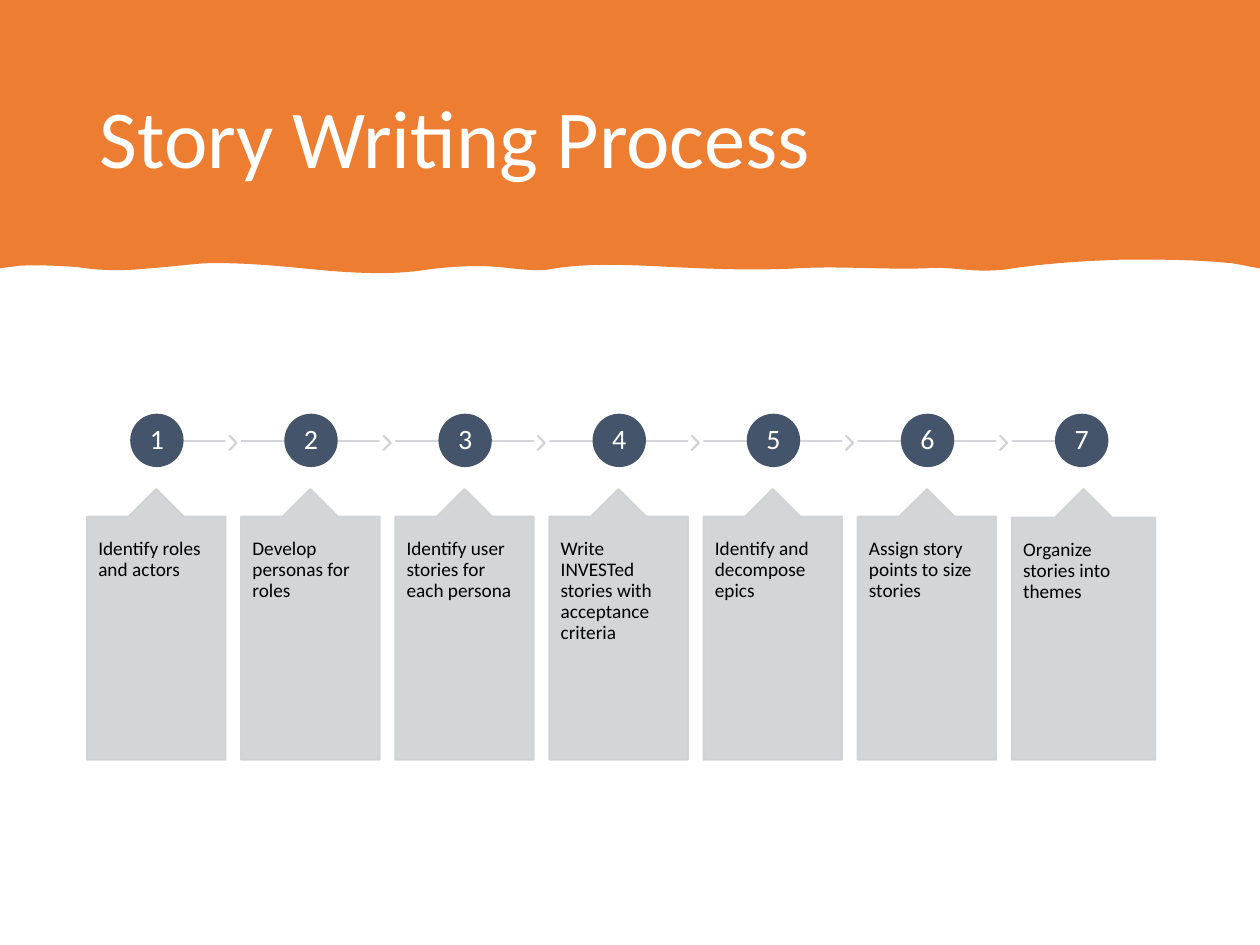
from dataclasses import dataclass

from lxml import etree
from pptx import Presentation
from pptx.dml.color import RGBColor
from pptx.enum.shapes import MSO_CONNECTOR, MSO_SHAPE
from pptx.enum.text import MSO_ANCHOR, PP_ALIGN
from pptx.oxml.ns import qn
from pptx.util import Inches, Pt

STRAIGHT = MSO_CONNECTOR.STRAIGHT
OVAL, CHEVRON, CALLOUT = MSO_SHAPE.OVAL, MSO_SHAPE.CHEVRON, MSO_SHAPE.UP_ARROW_CALLOUT
TOP, MIDDLE = MSO_ANCHOR.TOP, MSO_ANCHOR.MIDDLE
LEFT, CENTER = PP_ALIGN.LEFT, PP_ALIGN.CENTER


@dataclass(frozen=True)
class Theme:
    font: str = "Calibri"
    banner: RGBColor = RGBColor(0xED, 0x7D, 0x31)
    badge: RGBColor = RGBColor(0x44, 0x54, 0x6A)
    panel: RGBColor = RGBColor(0xCF, 0xD1, 0xD4)
    light: RGBColor = RGBColor(0xFF, 0xFF, 0xFF)
    dark: RGBColor = RGBColor(0, 0, 0)
    title_size: float = 47
    number_size: float = 16
    step_size: float = 11
    panel_alpha: int = 90


@dataclass(frozen=True)
class Step:
    number: int
    text: str
    left: float
    width: float
    first: bool
    last: bool


THEME = Theme()
STEPS = [
    "Identify roles and actors",
    "Develop personas for roles",
    "Identify user stories for each persona",
    "Write INVESTed stories with acceptance criteria",
    "Identify and decompose epics",
    "Assign story points to size stories",
    "Organize stories into themes",
]
FIRST_LEFT, LAST_LEFT = 0.69, 8.03
PITCH = (LAST_LEFT - FIRST_LEFT) / (len(STEPS) - 1)
RAIL_Y = 3.5

# Lower edge of the banner, right to left: each curve has two controls and an end
WAVE_START = (10, 2.13)
WAVE = [
    ((9.93, 2.12), (9.85, 2.1), (9.78, 2.09)),
    ((9.5, 2.06), (9.21, 2.06), (8.93, 2.06)),
    ((8.61, 2.07), (8.29, 2.09), (7.97, 2.14)),
    ((7.87, 2.15), (7.76, 2.15), (7.66, 2.14)),
    ((7.55, 2.13), (7.44, 2.12), (7.33, 2.13)),
    ((6.99, 2.14), (6.66, 2.11), (6.32, 2.13)),
    ((5.93, 2.15), (5.54, 2.13), (5.15, 2.11)),
    ((4.88, 2.1), (4.62, 2.09), (4.35, 2.14)),
    ((4.26, 2.15), (4.16, 2.14), (4.06, 2.13)),
    ((3.84, 2.1), (3.62, 2.11), (3.39, 2.14)),
    ((3.14, 2.18), (2.88, 2.17), (2.62, 2.15)),
    ((2.29, 2.12), (1.96, 2.08), (1.62, 2.09)),
    ((1.48, 2.1), (1.33, 2.12), (1.18, 2.13)),
    ((0.99, 2.15), (0.8, 2.15), (0.62, 2.12)),
    ((0.46, 2.11), (0.3, 2.1), (0.14, 2.11)),
    ((0.09, 2.12), (0.05, 2.12), (0, 2.13)),
]


def set_alpha(s, percent: int) -> None:
    for color in s._element.spPr.iter(qn("a:srgbClr")):
        etree.SubElement(color, qn("a:alpha"), val=str(percent * 1000))


def add_box(slide, kind, left: float, top: float, width: float, height: float,
            color: RGBColor, adjustments: tuple = ()):
    s = slide.shapes.add_shape(kind, Inches(left), Inches(top), Inches(width), Inches(height))
    s.shadow.inherit = False
    s.fill.solid()
    s.fill.fore_color.rgb = color
    s.line.color.rgb = color
    s.line.width = Pt(1)
    for i, value in enumerate(adjustments):
        s.adjustments[i] = value
    return s


def write(s, text: str, size: float, color: RGBColor, align, anchor,
          inset_x: float, inset_y: float) -> None:
    tf = s.text_frame
    tf.word_wrap = True
    tf.vertical_anchor = anchor
    tf.margin_left = tf.margin_right = Inches(inset_x)
    tf.margin_top = tf.margin_bottom = Inches(inset_y)
    p = tf.paragraphs[0]
    p.alignment = align
    p.line_spacing = 0.9
    r = p.add_run()
    r.text = text
    r.font.name = THEME.font
    r.font.size = Pt(size)
    r.font.color.rgb = color


def add_banner(slide) -> None:
    ends = [curve[-1] for curve in WAVE]
    corners = [(Inches(x), Inches(y)) for x, y in [(10, 0), WAVE_START, *ends]]
    builder = slide.shapes.build_freeform(0, 0)
    builder.add_line_segments(corners, close=True)
    s = builder.convert_to_shape()
    s.shadow.inherit = False
    s.fill.solid()
    s.fill.fore_color.rgb = THEME.banner
    s.line.fill.background()

    # Bend the segments of the lower edge into Bezier curves
    segments = list(s._element.iter(qn("a:lnTo")))[2:2 + len(WAVE)]
    for segment, curve in zip(segments, WAVE):
        bend = etree.Element(qn("a:cubicBezTo"))
        for x, y in curve:
            etree.SubElement(bend, qn("a:pt"), x=str(Inches(x)), y=str(Inches(y)))
        segment.getparent().replace(segment, bend)


def add_title(slide, text: str) -> None:
    sp = slide.shapes.title
    sp.left, sp.top, sp.width, sp.height = map(Inches, (0.69, 0.4, 8.62, 1.45))
    write(sp, text, THEME.title_size, THEME.light, LEFT, MIDDLE, 0.1, 0.05)
    # Bring the title in front of the banner
    slide.shapes._spTree.append(sp._element)


def add_rail(slide, start: float, end: float) -> None:
    s = slide.shapes.add_connector(
        STRAIGHT, Inches(start), Inches(RAIL_Y), Inches(end), Inches(RAIL_Y))
    s.line.color.rgb = THEME.panel
    s.line.width = Pt(1)
    set_alpha(s, THEME.panel_alpha)
    etree.SubElement(s._element.spPr, qn("a:effectLst"))


def add_step(slide, step: Step) -> None:
    # Rail and chevron to the next step
    add_rail(slide, step.left + (0.62 if step.first else 0),
             step.left + (0.55 if step.last else 1.1))
    if not step.last:
        s = add_box(slide, CHEVRON, step.left + 1.13, 3.46, 0.06, 0.11, THEME.panel, (0.9,))
        set_alpha(s, THEME.panel_alpha)

    # Numbered badge
    s = add_box(slide, OVAL, step.left + 0.35, 3.29, 0.41, 0.41, THEME.badge)
    write(s, str(step.number), THEME.number_size, THEME.light, CENTER, MIDDLE, 0.02, 0.02)

    # Callout with the description
    s = add_box(slide, CALLOUT, step.left, 3.88, step.width, 2.15, THEME.panel,
                (0.5, 0.2, 0.2, 1))
    set_alpha(s, THEME.panel_alpha)
    write(s, step.text, THEME.step_size, THEME.dark, LEFT, TOP, 0.09, 0.18)


def main() -> None:
    prs = Presentation()
    prs.slide_width, prs.slide_height = Inches(10), Inches(7.5)
    slide = prs.slides.add_slide(prs.slide_layouts[5])

    add_banner(slide)
    add_title(slide, "Story Writing Process")
    for i, text in enumerate(STEPS):
        last = i == len(STEPS) - 1
        add_step(slide, Step(i + 1, text, FIRST_LEFT + i * PITCH,
                             1.14 if last else 1.1, i == 0, last))

    prs.save("out.pptx")


if __name__ == "__main__":
    main()
